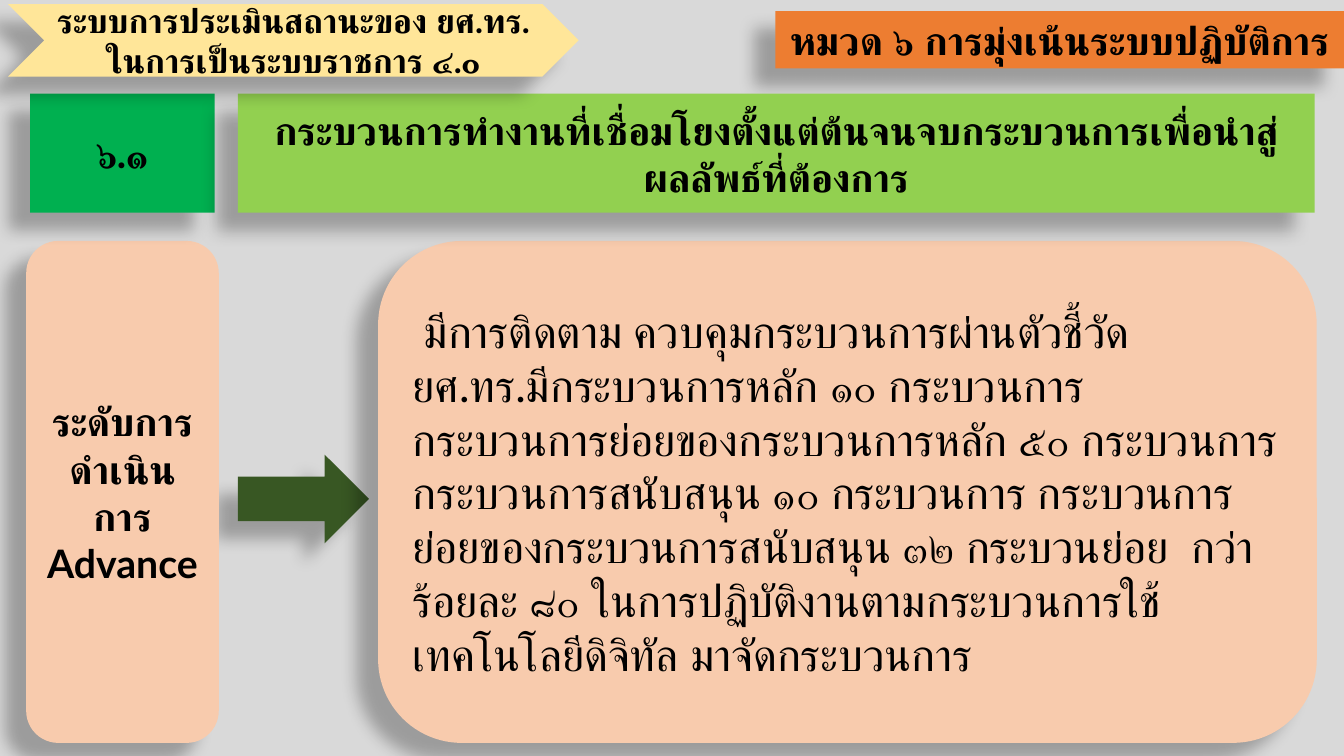
from lxml import etree
from pptx import Presentation
from pptx.dml.color import RGBColor
from pptx.enum.shapes import MSO_SHAPE as Geo
from pptx.enum.text import MSO_ANCHOR as Anchor, MSO_AUTO_SIZE as Fit, PP_ALIGN as Align
from pptx.oxml.ns import qn
from pptx.util import Inches, Pt

GRAY = RGBColor(0xD9, 0xD9, 0xD9)
ORANGE = RGBColor(0xED, 0x7D, 0x31)
FOREST = RGBColor(0x38, 0x57, 0x23)
PEACH = RGBColor(0xF8, 0xCB, 0xAD)
GREEN = RGBColor(0x00, 0xB0, 0x50)
LIME = RGBColor(0x92, 0xD0, 0x50)
CREAM = RGBColor(0xFF, 0xE6, 0x99)
BLACK = RGBColor(0x00, 0x00, 0x00)


def add_block(geo, box, color):
    """Add a borderless filled shape with a soft shadow to the lower left."""
    shape = slide.shapes.add_shape(geo, *map(Inches, box))
    shape.fill.solid()
    shape.fill.fore_color.rgb = color
    shape.line.fill.background()
    shape.shadow.inherit = False
    effects = shape._element.spPr.find(qn("a:effectLst"))
    shadow = etree.SubElement(
        effects, qn("a:outerShdw"), blurRad=str(Pt(11.8)), dist=str(Pt(19.7)),
        dir=str(141 * 60000), algn="tr", rotWithShape="0")
    tint = etree.SubElement(shadow, qn("a:srgbClr"), val="000000")
    etree.SubElement(tint, qn("a:alpha"), val="28000")
    return shape


def write(shape, *lines, size=28, bold=True, align=Align.CENTER, anchor=Anchor.MIDDLE):
    frame = shape.text_frame
    frame.word_wrap = True
    frame.vertical_anchor = anchor
    for i, line in enumerate(lines):
        para = frame.add_paragraph() if i else frame.paragraphs[0]
        para.alignment = align
        run = para.add_run()
        run.text = line
        run.font.name = "Lato"
        run.font.size = Pt(size)
        run.font.bold = bold
        run.font.color.rgb = BLACK


prs = Presentation()
prs.slide_width, prs.slide_height = Inches(13.33), Inches(7.5)
slide = prs.slides.add_slide(prs.slide_layouts[6])
slide.background.fill.solid()
slide.background.fill.fore_color.rgb = GRAY

topic = add_block(Geo.RECTANGLE, (7.69, 0.11, 5.64, 0.57), ORANGE)
write(topic, "หมวด ๖ การมุ่งเน้นระบบปฏิบัติการ", anchor=Anchor.TOP)
topic.text_frame.auto_size = Fit.SHAPE_TO_FIT_TEXT

add_block(Geo.RIGHT_ARROW, (2.36, 4.51, 1.3, 0.88), FOREST)

detail = add_block(Geo.ROUNDED_RECTANGLE, (3.75, 2.39, 9.31, 4.98), PEACH)
write(
    detail,
    " มีการติดตาม ควบคุมกระบวนการผ่านตัวชี้วัด  ยศ.ทร.มีกระบวนการหลัก ๑๐ กระบวนการ "
    "กระบวนการย่อยของกระบวนการหลัก ๕๐ กระบวนการ กระบวนการสนับสนุน ๑๐ กระบวนการ "
    "กระบวนการย่อยของกระบวนการสนับสนุน ๓๒ กระบวนย่อย  กว่าร้อยละ ๘๐ "
    "ในการปฏิบัติงานตามกระบวนการใช้เทคโนโลยีดิจิทัล มาจัดกระบวนการ",
    size=32, bold=False, align=Align.LEFT)

level = add_block(Geo.ROUNDED_RECTANGLE, (0.26, 2.39, 1.91, 4.98), PEACH)
write(level, "ระดับการดำเนินการ Advance")

number = add_block(Geo.RECTANGLE, (0.3, 0.93, 1.83, 1.18), GREEN)
write(number, "๖.๑")

title = add_block(Geo.RECTANGLE, (2.36, 0.93, 10.68, 1.18), LIME)
write(title, "กระบวนการทำงานที่เชื่อมโยงตั้งแต่ต้นจนจบกระบวนการเพื่อนำสู่ผลลัพธ์ที่ต้องการ")

banner = add_block(Geo.CHEVRON, (0.08, 0.04, 5.66, 0.72), CREAM)
write(banner, "ระบบการประเมินสถานะของ ยศ.ทร.", "ในการเป็นระบบราชการ ๔.๐", size=24)

prs.save("out.pptx")
